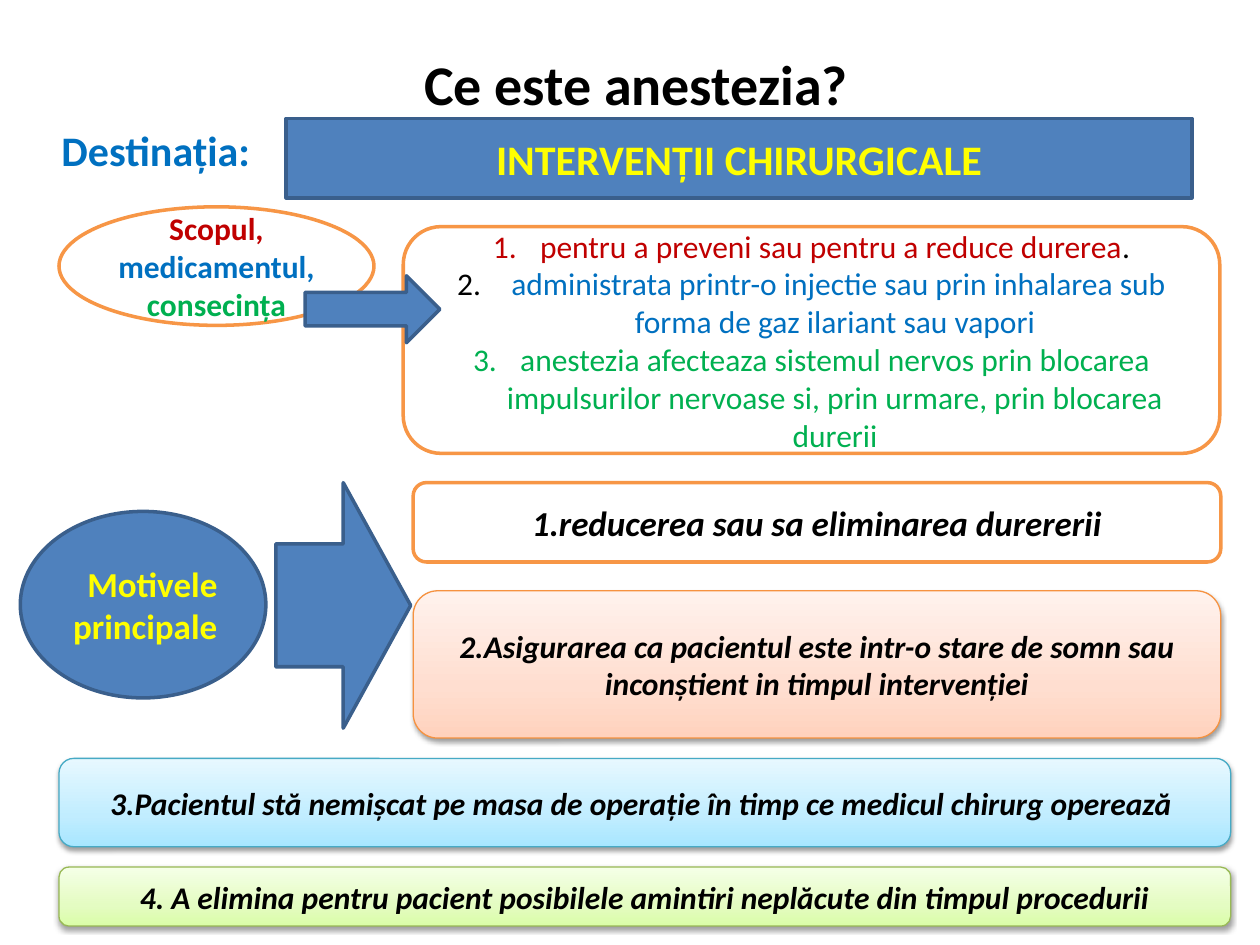
from copy import deepcopy
from dataclasses import dataclass
from typing import NamedTuple

from lxml.etree import SubElement
from pptx import Presentation
from pptx.dml.color import RGBColor
from pptx.enum.shapes import MSO_SHAPE
from pptx.enum.text import MSO_ANCHOR, PP_ALIGN
from pptx.oxml.ns import qn
from pptx.util import Cm, Pt


@dataclass(frozen=True)
class Theme:
    font: str = "Calibri"
    title: int = 32
    heading: int = 24
    reason: int = 20
    body: int = 18
    black: str = "000000"
    white: str = "FFFFFF"
    yellow: str = "FFFF00"
    red: str = "C00000"
    blue: str = "0070C0"
    green: str = "00B050"
    steel: str = "4F81BD"
    steel_edge: str = "3A5F8C"
    orange: str = "F79646"


THEME = Theme()


class Span(NamedTuple):
    text: str
    color: str = THEME.black


class Look(NamedTuple):
    fills: tuple[str, ...]
    edge: str
    width: float = 2


STEEL = Look((THEME.steel,), THEME.steel_edge)
OUTLINED = Look((THEME.white,), THEME.orange)
PEACH = Look(("FFD2BD", "FFDED0", "FFF2ED"), "F69240", 0.75)
SKY = Look(("A7E6FF", "C1EDFF", "E7F8FF"), "46AAC5", 0.75)
LIME = Look(("DAFDA7", "E4FCC2", "F5FFE7"), "98B955", 0.75)


class Area(NamedTuple):
    left: float
    top: float
    width: float
    height: float


@dataclass(frozen=True)
class Block:
    area: Area
    paragraphs: tuple[tuple[Span, ...], ...] = ()
    size: int = THEME.body
    kind: MSO_SHAPE | None = None
    look: Look = STEEL
    align: PP_ALIGN = PP_ALIGN.CENTER
    anchor: MSO_ANCHOR = MSO_ANCHOR.MIDDLE
    bold: bool = True
    italic: bool = False
    numbered: bool = False


def reason(area: Area, text: str, look: Look, size: int = THEME.body) -> Block:
    return Block(area, ((Span(text),),), size, MSO_SHAPE.ROUNDED_RECTANGLE, look, italic=True)


BLOCKS = (
    Block(Area(1.27, 0.76, 22.86, 1.83), ((Span(" Ce este anestezia?"),),), THEME.title),
    Block(Area(0.99, 2.39, 24, 14.25), ((Span("Destinația:", THEME.blue),),), THEME.heading,
          align=PP_ALIGN.LEFT, anchor=MSO_ANCHOR.TOP),
    Block(Area(5.77, 2.39, 18.26, 1.6), ((Span("INTERVENȚII CHIRURGICALE", THEME.yellow),),),
          THEME.heading, MSO_SHAPE.RECTANGLE),
    Block(Area(1.19, 4.17, 6.35, 2.39),
          ((Span("Scopul, ", THEME.red), Span("medicamentul, ", THEME.blue),
            Span("consecința", THEME.green)),),
          kind=MSO_SHAPE.OVAL, look=OUTLINED),
    Block(Area(8.13, 4.57, 16.46, 4.57),
          ((Span("pentru a preveni sau pentru a reduce durerea", THEME.red), Span(".")),
           (Span(" "), Span("administrata printr-o injectie sau prin inhalarea sub forma de gaz "
                            "ilariant sau vapori", THEME.blue)),
           (Span("anestezia afecteaza sistemul nervos prin blocarea impulsurilor nervoase si, "
                 "prin urmare, prin blocarea durerii", THEME.green),)),
          kind=MSO_SHAPE.ROUNDED_RECTANGLE, look=OUTLINED, bold=False, numbered=True),
    Block(Area(6.15, 5.56, 2.72, 1.35), kind=MSO_SHAPE.RIGHT_ARROW),
    Block(Area(0.41, 10.31, 4.95, 3.76), ((Span("Motivele principale", THEME.yellow),),),
          THEME.reason, MSO_SHAPE.OVAL, align=PP_ALIGN.RIGHT),
    reason(Area(8.33, 9.73, 16.28, 1.6), "1.reducerea sau sa eliminarea durererii",
           OUTLINED, THEME.reason),
    reason(Area(8.33, 11.91, 16.28, 2.97),
           "2.Asigurarea ca pacientul este intr-o stare de somn sau inconștient in timpul "
           "intervenției", PEACH),
    reason(Area(1.19, 15.29, 23.62, 1.78),
           "3.Pacientul stă nemișcat pe masa de operație în timp ce medicul chirurg operează ",
           SKY),
    reason(Area(1.19, 17.48, 23.62, 1.19),
           "4. A elimina pentru pacient posibilele amintiri neplăcute din timpul procedurii",
           LIME),
    Block(Area(5.56, 9.73, 2.72, 4.95), kind=MSO_SHAPE.RIGHT_ARROW),
)


def rgb(color: str) -> RGBColor:
    return RGBColor.from_string(color)


def fill_gradient(shape, colors: tuple[str, ...]) -> None:
    shape.fill.gradient()
    shape.fill.gradient_angle = 90
    stop_list = shape._element.spPr.find(qn("a:gradFill")).find(qn("a:gsLst"))
    stop_list.insert(1, deepcopy(stop_list[0]))
    for stop, position, color in zip(shape.fill.gradient_stops, (0, 0.35, 1), colors):
        stop.position = position
        stop.color.rgb = rgb(color)


def add_shadow(shape) -> None:
    effects = shape._element.spPr.find(qn("a:effectLst"))
    outer = SubElement(effects, qn("a:outerShdw"), blurRad=str(Pt(3.1)), dist=str(Pt(1.6)),
                       dir="5400000", rotWithShape="0")
    tone = SubElement(outer, qn("a:srgbClr"), val=THEME.black)
    SubElement(tone, qn("a:alpha"), val="38000")


def style_shape(shape, look: Look) -> None:
    shape.shadow.inherit = False
    shape.line.color.rgb = rgb(look.edge)
    shape.line.width = Pt(look.width)
    if len(look.fills) > 1:
        fill_gradient(shape, look.fills)
        add_shadow(shape)
    else:
        shape.fill.solid()
        shape.fill.fore_color.rgb = rgb(look.fills[0])


def number_paragraph(paragraph) -> None:
    properties = paragraph._p.get_or_add_pPr()
    properties.set("marL", str(Cm(0.95)))
    properties.set("indent", str(Cm(-0.95)))
    SubElement(properties, qn("a:buFont"), typeface="+mj-lt")
    SubElement(properties, qn("a:buAutoNum"), type="arabicPeriod")


def write_text(frame, block: Block) -> None:
    frame.word_wrap = True
    frame.vertical_anchor = block.anchor
    for index, spans in enumerate(block.paragraphs):
        paragraph = frame.add_paragraph() if index else frame.paragraphs[0]
        paragraph.alignment = block.align
        if block.numbered:
            number_paragraph(paragraph)
        font = paragraph.font
        font.name = THEME.font
        font.size = Pt(block.size)
        font.bold = block.bold
        font.italic = block.italic
        font.color.rgb = rgb(spans[0].color)
        for span in spans:
            run = paragraph.add_run()
            run.text = span.text
            if span.color != spans[0].color:
                run.font.color.rgb = rgb(span.color)


def draw_block(page, block: Block) -> None:
    place = [Cm(length) for length in block.area]
    if block.kind is None:
        box = page.shapes.add_textbox(*place)
    else:
        box = page.shapes.add_shape(block.kind, *place)
        style_shape(box, block.look)
    write_text(box.text_frame, block)


def main() -> None:
    deck = Presentation()
    deck.slide_width, deck.slide_height = Cm(25.4), Cm(19.05)
    page = deck.slides.add_slide(deck.slide_layouts[6])
    for block in BLOCKS:
        draw_block(page, block)
    deck.save("out.pptx")


if __name__ == "__main__":
    main()
